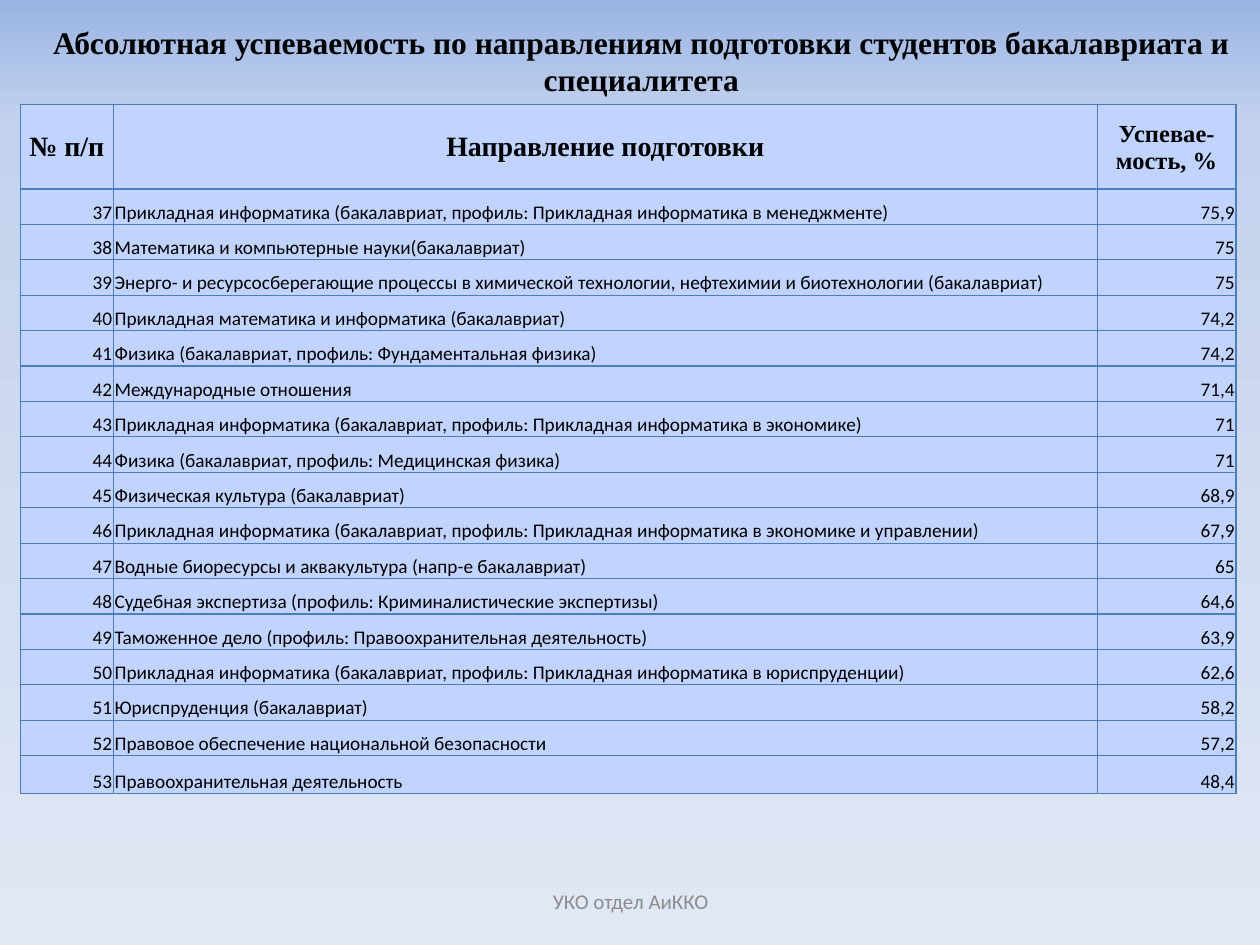
from copy import deepcopy
from dataclasses import dataclass
from typing import Any

from lxml.etree import SubElement
from pptx import Presentation
from pptx.dml.color import RGBColor
from pptx.enum.text import MSO_ANCHOR, MSO_AUTO_SIZE, PP_ALIGN
from pptx.oxml.ns import qn
from pptx.util import Inches, Pt


@dataclass
class Style:
    size: int
    font: str
    bold: bool
    align: PP_ALIGN
    color: str = "000000"


@dataclass
class Course:
    name: str
    rate: str


SERIF, SANS = "Times New Roman", "Calibri"
HEAD = Style(16, SERIF, True, PP_ALIGN.CENTER)
SIDE = Style(14, SERIF, True, PP_ALIGN.CENTER)
LEFT = Style(11, SANS, False, PP_ALIGN.LEFT)
RIGHT = Style(11, SANS, False, PP_ALIGN.RIGHT)
FIRST = 37
WIDTHS = (0.74, 7.81, 1.1)
TOP, LAST, TALL = 0.67, 0.3, 5.47
HEADS = (("№ п/п", HEAD), ("Направление подготовки", HEAD), ("Успевае-мость, %", SIDE))
COURSES = [
    Course("Прикладная информатика (бакалавриат, профиль: Прикладная информатика в менеджменте)", "75,9"),
    Course("Математика и компьютерные науки(бакалавриат)", "75"),
    Course("Энерго- и ресурсосберегающие процессы в химической технологии, "
           "нефтехимии и биотехнологии (бакалавриат)", "75"),
    Course("Прикладная математика и информатика (бакалавриат)", "74,2"),
    Course("Физика (бакалавриат, профиль: Фундаментальная физика)", "74,2"),
    Course("Международные отношения", "71,4"),
    Course("Прикладная информатика (бакалавриат, профиль: Прикладная информатика в экономике)", "71"),
    Course("Физика (бакалавриат, профиль: Медицинская физика)", "71"),
    Course("Физическая культура (бакалавриат)", "68,9"),
    Course("Прикладная информатика (бакалавриат, профиль: Прикладная информатика "
           "в экономике и управлении)", "67,9"),
    Course("Водные биоресурсы и аквакультура (напр-е бакалавриат)", "65"),
    Course("Судебная экспертиза (профиль: Криминалистические экспертизы)", "64,6"),
    Course("Таможенное дело (профиль: Правоохранительная деятельность)", "63,9"),
    Course("Прикладная информатика (бакалавриат, профиль: Прикладная информатика в юриспруденции)", "62,6"),
    Course("Юриспруденция (бакалавриат)", "58,2"),
    Course("Правовое обеспечение национальной безопасности", "57,2"),
    Course("Правоохранительная деятельность", "48,4"),
]


def paint(item: Any, color: str) -> None:
    item.rgb = RGBColor.from_string(color)


def apply(item: Any, values: dict[str, Any]) -> None:
    for key, value in values.items():
        setattr(item, key, value)


def write(frame: Any, text: str, style: Style) -> None:
    para = frame.paragraphs[0]
    para.alignment = style.align
    run = para.add_run()
    run.text = text
    apply(run.font, {"size": Pt(style.size), "name": style.font, "bold": style.bold})
    paint(run.font.color, style.color)


def place(shape: Any, left: float, top: float, width: float, height: float) -> None:
    apply(shape, {"left": Inches(left), "top": Inches(top),
                  "width": Inches(width), "height": Inches(height)})


def shade(slide: Any) -> None:
    fill = slide.background.fill
    fill.gradient()
    fill.gradient_angle = 270
    stops = slide.element.find(".//" + qn("a:gsLst"))
    stops.append(deepcopy(stops[-1]))
    tones = ((0, "9AB5E4"), (0.13, "C2D1ED"), (1, "E1E8F5"))
    for stop, (spot, color) in zip(fill.gradient_stops, tones):
        stop.position = spot
        paint(stop.color, color)


def edge(cell: Any) -> None:
    props = cell._tc.get_or_add_tcPr()
    for side in ("lnL", "lnR", "lnT", "lnB"):
        line = SubElement(props, qn(f"a:{side}"), w=str(Pt(0.75)))
        solid = SubElement(line, qn("a:solidFill"))
        SubElement(solid, qn("a:srgbClr"), val="4B7EBC")


def fill(cell: Any, text: str, style: Style, anchor: MSO_ANCHOR) -> None:
    gap = Inches(0.01)
    apply(cell, {"margin_left": gap, "margin_right": gap, "margin_top": gap,
                 "margin_bottom": 0, "vertical_anchor": anchor})
    edge(cell)
    cell.fill.solid()
    paint(cell.fill.fore_color, "C0D4FF")
    write(cell.text_frame, text, style)


def chart(slide: Any) -> None:
    count = len(COURSES)
    frame = slide.shapes.add_table(count + 1, len(WIDTHS), Inches(0.16), Inches(0.83),
                                   Inches(sum(WIDTHS)), Inches(TALL))
    table = frame.table
    for col, width in zip(table.columns, WIDTHS):
        col.width = Inches(width)
    step = (TALL - TOP - LAST) / (count - 1)
    for row, height in zip(table.rows, [TOP] + [step] * (count - 1) + [LAST]):
        row.height = Inches(height)
    for col, (text, style) in enumerate(HEADS):
        fill(table.cell(0, col), text, style, MSO_ANCHOR.MIDDLE)
    for row, course in enumerate(COURSES, 1):
        cells = ((str(FIRST + row - 1), RIGHT), (course.name, LEFT), (course.rate, RIGHT))
        for col, (text, style) in enumerate(cells):
            fill(table.cell(row, col), text, style, MSO_ANCHOR.BOTTOM)


def main() -> None:
    deck = Presentation()
    apply(deck, {"slide_width": Inches(10), "slide_height": Inches(7.5)})
    slide = deck.slides.add_slide(deck.slide_layouts[5])
    shade(slide)
    title = slide.shapes.title
    place(title, 0.19, 0.13, 9.8, 0.71)
    apply(title.text_frame, {"word_wrap": True, "vertical_anchor": MSO_ANCHOR.TOP,
                             "auto_size": MSO_AUTO_SIZE.SHAPE_TO_FIT_TEXT})
    write(title.text_frame, "Абсолютная успеваемость по направлениям подготовки "
          "студентов бакалавриата и специалитета", Style(18, SERIF, True, PP_ALIGN.CENTER))
    chart(slide)
    foot = slide.shapes.add_textbox(0, 0, 0, 0)
    place(foot, 3.42, 6.95, 3.17, 0.4)
    apply(foot.text_frame, {"word_wrap": True, "vertical_anchor": MSO_ANCHOR.MIDDLE})
    write(foot.text_frame, "УКО отдел АиККО", Style(12, SANS, False, PP_ALIGN.CENTER, "8C8C8C"))
    deck.save("out.pptx")


if __name__ == "__main__":
    main()
